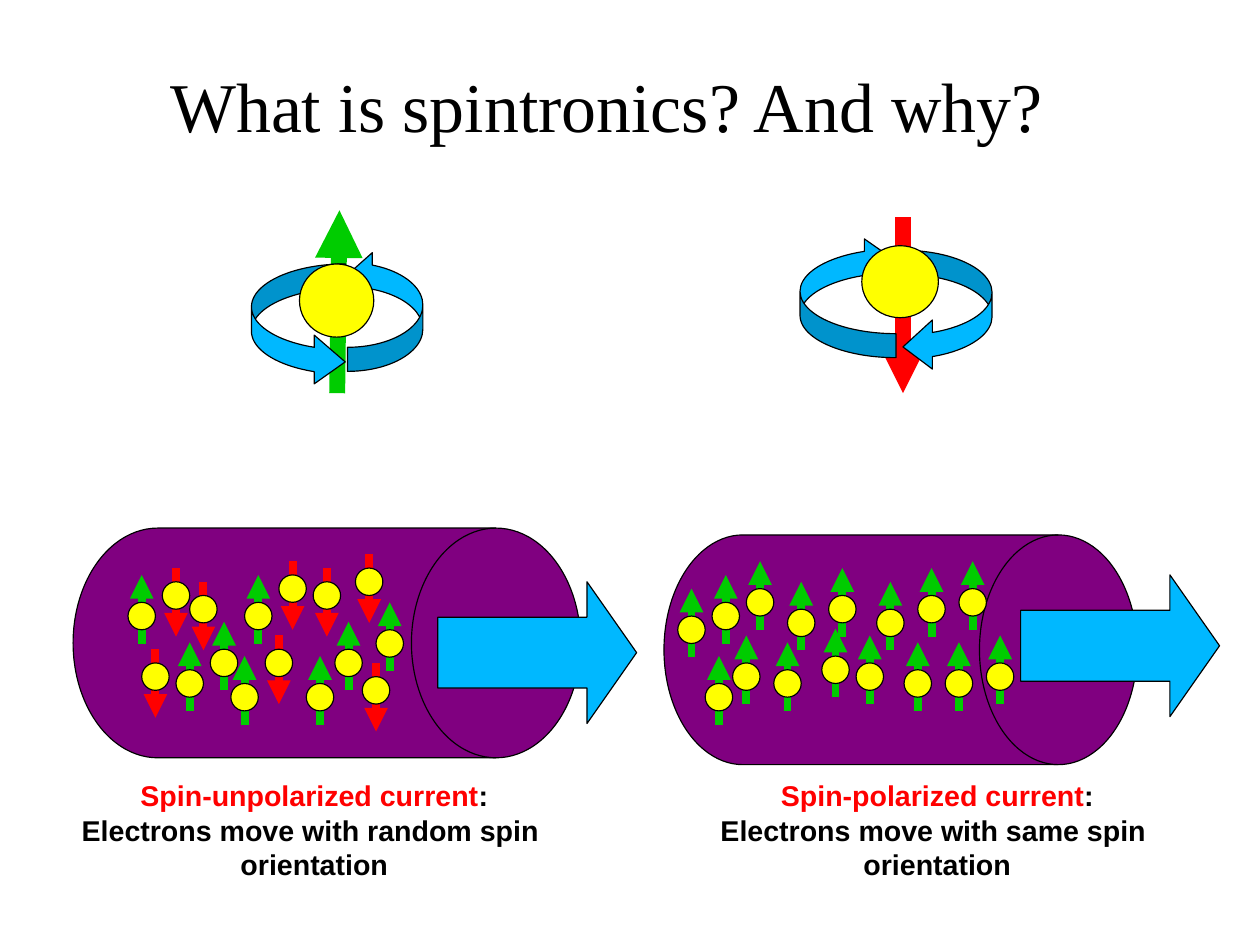
from lxml.etree import SubElement
from pptx import Presentation
from pptx.dml.color import RGBColor
from pptx.enum.shapes import MSO_CONNECTOR, MSO_SHAPE as Preset
from pptx.enum.text import MSO_ANCHOR, MSO_AUTO_SIZE, PP_ALIGN
from pptx.oxml.ns import qn
from pptx.util import Cm, Inches, Pt

COLORS = {"up": "00CC00", "down": "FF0000", "electron": "FFFF00", "flow": "00B8FF",
          "wire": "800080", "term": "FF0000", "text": "000000", "outline": "000000"}
TITLE = "What is spintronics? And why?"
ELECTRON_SIZE = 0.24
TAIL_REACH, TIP_REACH = 0.24, 0.36  # from the electron's centre

# Large electrons: shaft is (from, to); rings are (preset, box, flips, adjustments)
LEFT_RING, RIGHT_RING = Preset.CURVED_RIGHT_ARROW, Preset.CURVED_LEFT_ARROW
SPINS = [
    {"spin": "up", "shaft": ((2.95, 3.44), (2.97, 1.84)),
     "back": [(RIGHT_RING, (3.04, 2.19, 0.66, 1.06), "V", (0.32, 0.65, 0.33))],
     "front": [(LEFT_RING, (2.2, 2.31, 0.82, 1.07), "", (0.26, 0.52, 0.33))],
     "ball": (2.62, 2.31, 0.65, 0.64)},
    {"spin": "down", "shaft": ((7.9, 1.9), (7.9, 3.44)),
     "back": [],
     "front": [(LEFT_RING, (7.9, 2.19, 0.78, 1.06), "H", (0.27, 0.55, 0.33)),
               (RIGHT_RING, (7, 2.07, 0.84, 1.06), "HV", (0.25, 0.51, 0.33))],
     "ball": (7.54, 2.15, 0.67, 0.63)},
]

# Wires: electrons are (spin, centre x, centre y), back to front
UNPOLARIZED = [
    ("up", 1.24, 5.39), ("down", 1.54, 5.21), ("down", 1.36, 5.92), ("down", 1.78, 5.33),
    ("down", 2.44, 5.8), ("down", 2.56, 5.15), ("up", 1.96, 5.8), ("up", 2.26, 5.39),
    ("up", 3.41, 5.63), ("up", 3.05, 5.8), ("up", 2.8, 6.1), ("up", 2.14, 6.1),
    ("up", 1.66, 5.98), ("down", 3.29, 6.04), ("down", 2.86, 5.21), ("down", 3.23, 5.09),
]
POLARIZED = [("up", x, y) for x, y in [
    (6.35, 5.39), (6.65, 5.27), (7.01, 5.45), (7.37, 5.33), (6.53, 5.92), (6.89, 5.98),
    (7.31, 5.86), (7.79, 5.45), (7.61, 5.92), (8.15, 5.33), (8.03, 5.98), (6.05, 5.51),
    (6.29, 6.1), (8.39, 5.98), (8.51, 5.27), (8.75, 5.92),
]]
WIRES = [
    {"drum": (0.64, 4.62, 4.44, 2.01), "electrons": UNPOLARIZED,
     "flow": (3.83, 5.09, 1.74, 1.24), "caption": (0.67, 6.8, 4.16, 0.93),
     "term": "Spin-unpolarized current",
     "meaning": ["Electrons move with random spin ", "orientation"]},
    {"drum": (5.81, 4.68, 4.14, 2.01), "electrons": POLARIZED,
     "flow": (8.93, 5.03, 1.74, 1.24), "caption": (6.26, 6.8, 3.88, 0.93),
     "term": "Spin-polarized current",
     "meaning": ["Electrons move with same spin ", "orientation"]},
]


def color(role):
    return RGBColor.from_string(COLORS[role])


def inches(lengths):
    return [Inches(length) for length in lengths]


def add_outlined(slide, preset, box, role, adjustments=(), flips=""):
    shape = slide.shapes.add_shape(preset, *inches(box))
    shape.shadow.inherit = False
    shape.fill.solid()
    shape.fill.fore_color.rgb = color(role)
    shape.line.color.rgb = color("outline")
    shape.line.width = Pt(0.75)
    for index, value in enumerate(adjustments):
        shape.adjustments[index] = value
    for axis in flips:
        shape._element.spPr.find(qn("a:xfrm")).set("flip" + axis, "1")


def add_spin_arrow(slide, start, end, spin, width):
    arrow = slide.shapes.add_connector(MSO_CONNECTOR.STRAIGHT, *inches(start + end))
    arrow.line.color.rgb = color(spin)
    arrow.line.width = Pt(width)
    SubElement(arrow.line._get_or_add_ln(), qn("a:tailEnd"), type="triangle")
    SubElement(arrow._element.spPr, qn("a:effectLst"))


def add_electron(slide, spin, x, y):
    direction = -1 if spin == "up" else 1
    add_spin_arrow(slide, (x, y - direction * TAIL_REACH), (x, y + direction * TIP_REACH), spin, 5)
    corner = (x - ELECTRON_SIZE / 2, y - ELECTRON_SIZE / 2)
    add_outlined(slide, Preset.OVAL, corner + (ELECTRON_SIZE, ELECTRON_SIZE), "electron")


def add_large_electron(slide, electron):
    for preset, box, flips, adjustments in electron["back"]:
        add_outlined(slide, preset, box, "flow", adjustments, flips)
    add_spin_arrow(slide, *electron["shaft"], electron["spin"], 10)
    for preset, box, flips, adjustments in electron["front"]:
        add_outlined(slide, preset, box, "flow", adjustments, flips)
    add_outlined(slide, Preset.OVAL, electron["ball"], "electron")


def set_frame(frame, side, edge):
    frame.word_wrap = False
    frame.auto_size = MSO_AUTO_SIZE.NONE
    frame.vertical_anchor = MSO_ANCHOR.TOP
    frame.margin_left = frame.margin_right = Inches(side)
    frame.margin_top = frame.margin_bottom = Inches(edge)


def add_caption(slide, wire):
    frame = slide.shapes.add_textbox(*inches(wire["caption"])).text_frame
    set_frame(frame, 0.02, 0.01)
    frame.text = "\n".join(["", *wire["meaning"]])
    for text, role in ((wire["term"], "term"), (":", "text")):
        run = frame.paragraphs[0].add_run()
        run.text = text
        run.font.color.rgb = color(role)
    for paragraph in frame.paragraphs:
        paragraph.alignment = PP_ALIGN.CENTER
        paragraph.font.name = "Arial"
        paragraph.font.size = Pt(18)
        paragraph.font.bold = True
        paragraph.font.color.rgb = color("text")


def set_title(slide):
    title = slide.shapes.title
    title.left, title.top, title.width, title.height = inches((1.38, 0.49, 7.91, 0.85))
    title.text_frame.text = TITLE
    set_frame(title.text_frame, 0.11, 0.06)
    heading = title.text_frame.paragraphs[0]
    heading.alignment = PP_ALIGN.LEFT
    heading.font.name = "Times New Roman"
    heading.font.size = Pt(44)
    heading.font.color.rgb = color("text")


def main():
    deck = Presentation()
    deck.slide_width = Cm(28)
    deck.slide_height = Cm(21)
    slide = deck.slides.add_slide(deck.slide_layouts[5])
    set_title(slide)
    for wire in WIRES:
        add_outlined(slide, Preset.FLOWCHART_DIRECT_ACCESS_STORAGE, wire["drum"], "wire")
        for electron in wire["electrons"]:
            add_electron(slide, *electron)
        add_outlined(slide, Preset.RIGHT_ARROW, wire["flow"], "flow", (0.5, 0.35))
        add_caption(slide, wire)
    for electron in SPINS:
        add_large_electron(slide, electron)
    deck.save("out.pptx")


if __name__ == "__main__":
    main()
